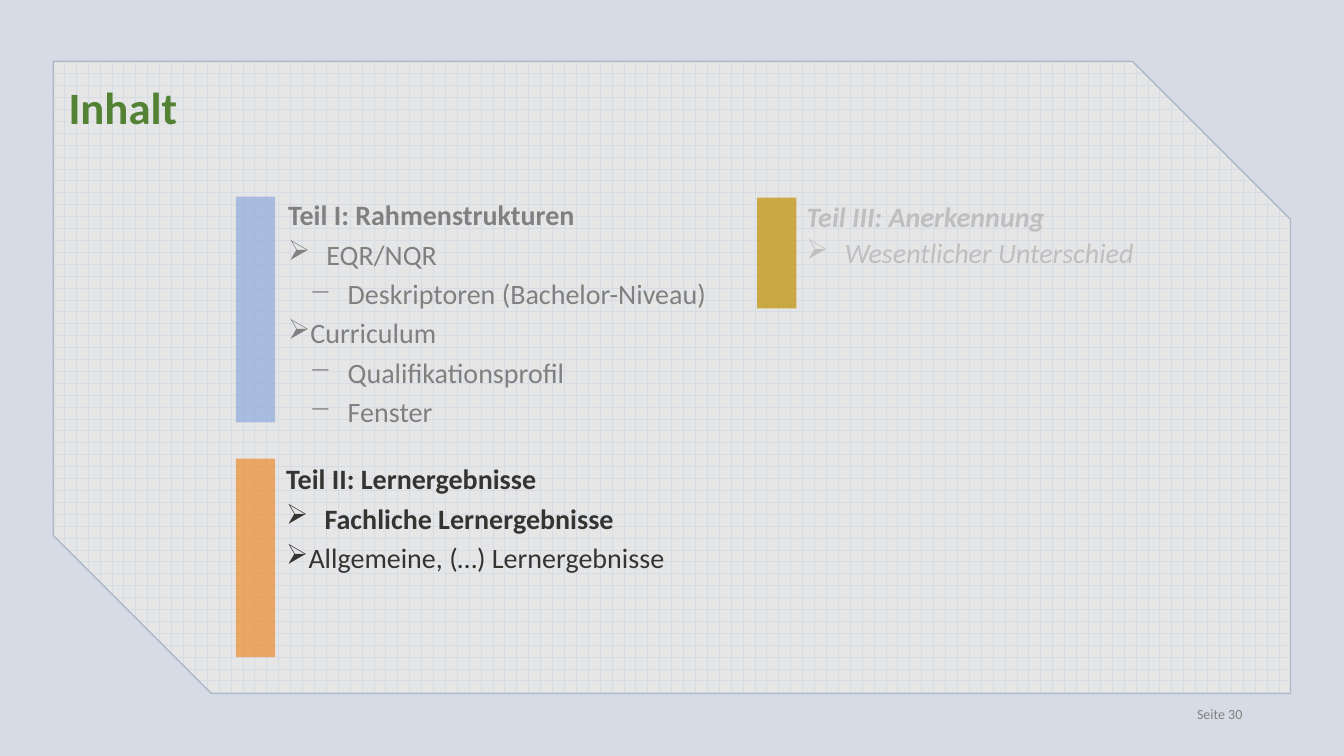
"""Build the contents slide with three course parts."""
from dataclasses import dataclass

from lxml import etree
from pptx import Presentation
from pptx.dml.color import RGBColor
from pptx.enum.dml import MSO_PATTERN
from pptx.enum.shapes import MSO_SHAPE
from pptx.enum.text import MSO_ANCHOR, MSO_AUTO_SIZE, PP_ALIGN
from pptx.oxml.ns import qn
from pptx.shapes.autoshape import Shape
from pptx.slide import Slide
from pptx.text.text import TextFrame, _Paragraph
from pptx.util import Inches, Pt

BRICK = MSO_PATTERN.HORIZONTAL_BRICK
SNIPPED = MSO_SHAPE.SNIP_2_DIAG_RECTANGLE
RECTANGLE = MSO_SHAPE.RECTANGLE
BOTTOM, TOP = MSO_ANCHOR.BOTTOM, MSO_ANCHOR.TOP
LEFT, RIGHT = PP_ALIGN.LEFT, PP_ALIGN.RIGHT
NO_AUTOFIT = MSO_AUTO_SIZE.NONE
TITLE_ONLY = 5
ARROW, DASH = "➢", "−"
HANGING = 0.38
BAR_WIDTH = 0.39
TIGHT = 0.9


@dataclass(frozen=True)
class Theme:
    """Colours and type sizes of the slide."""
    font: str = "Calibri"
    title_size: int = 32
    body_size: int = 20
    footer_size: int = 10
    background: str = "D6DCE5"
    panel: str = "E7E6E6"
    outline: str = "ADB9CA"
    title: str = "548235"
    muted: str = "808080"
    faint: str = "BFBFBF"
    active: str = "343433"
    blue: str = "8FAADC"
    orange: str = "EB8B2D"
    gold: str = "BF9000"
    bar_opacity: int = 70


@dataclass(frozen=True)
class Box:
    """Place and size in inches."""
    left: float
    top: float
    width: float
    height: float

    def lengths(self) -> tuple[Inches, Inches, Inches, Inches]:
        """Return the four values as lengths."""
        return Inches(self.left), Inches(self.top), Inches(self.width), Inches(self.height)


@dataclass(frozen=True)
class Item:
    """One bulleted line."""
    text: str
    bullet: str = ARROW
    margin: float = HANGING
    level: int = 0
    bold: bool = False


@dataclass(frozen=True)
class Part:
    """One course part with its coloured bar."""
    heading: str
    items: tuple[Item, ...]
    box: Box
    bar: Box
    bar_color: str
    text_color: str
    italic: bool = False
    item_spacing: float = 1.0


THEME = Theme()


def sub_item(text: str) -> Item:
    """Return a second-level dashed line."""
    return Item(text, DASH, 0.59, 1)


PARTS = (
    Part("Teil I: Rahmenstrukturen",
         (Item("EQR/NQR"), sub_item("Deskriptoren (Bachelor-Niveau)"),
          Item("Curriculum", margin=0.09), sub_item("Qualifikationsprofil"),
          sub_item("Fenster")),
         Box(2.76, 1.95, 5.82, 2.25), Box(2.34, 1.95, BAR_WIDTH, 2.24),
         THEME.blue, THEME.muted),
    Part("Teil II: Lernergebnisse",
         (Item("Fachliche Lernergebnisse", bold=True),
          Item("Allgemeine, (…) Lernergebnisse", margin=0.09)),
         Box(2.74, 4.57, 5.82, 1.29), Box(2.34, 4.55, BAR_WIDTH, 1.97),
         THEME.orange, THEME.active),
    Part("Teil III: Anerkennung", (Item("Wesentlicher Unterschied"),),
         Box(7.9, 1.97, 5.12, 1.09), Box(7.51, 1.96, BAR_WIDTH, 1.1),
         THEME.gold, THEME.faint, italic=True, item_spacing=TIGHT),
)


def color(value: str) -> RGBColor:
    """Turn a hex value into a colour."""
    return RGBColor.from_string(value)


def add_run(paragraph: _Paragraph, text: str, size: int, fill: str,
            bold: bool = False, italic: bool = False) -> None:
    """Add one formatted run."""
    run = paragraph.add_run()
    run.text = text
    font = run.font
    font.name, font.size = THEME.font, Pt(size)
    font.bold, font.italic = bold, italic
    font.color.rgb = color(fill)


def add_text_frame(slide: Slide, box: Box) -> TextFrame:
    """Add a wrapping text box and return its frame."""
    frame = slide.shapes.add_textbox(*box.lengths()).text_frame
    frame.word_wrap = True
    frame.vertical_anchor = TOP
    return frame


def set_bullet(paragraph: _Paragraph, item: Item) -> None:
    """Give a paragraph its hanging indent and bullet."""
    properties = paragraph._p.get_or_add_pPr()
    properties.set("marL", str(Inches(item.margin)))
    properties.set("indent", str(Inches(-HANGING)))
    etree.SubElement(properties, qn("a:buChar")).set("char", item.bullet)


def add_panel(slide: Slide) -> None:
    """Add the patterned panel with two snipped corners."""
    panel = slide.shapes.add_shape(SNIPPED, *Box(0.53, 0.61, 12.27, 6.27).lengths())
    panel.shadow.inherit = False
    panel.adjustments[0], panel.adjustments[1] = 0, 0.25
    panel.fill.patterned()
    panel.fill.pattern = BRICK
    panel.fill.fore_color.rgb = color(THEME.background)
    panel.fill.back_color.rgb = color(THEME.panel)
    panel.line.color.rgb = color(THEME.outline)
    panel.line.width = Pt(1)


def format_title(title: Shape) -> None:
    """Place and fill the title in front of the panel."""
    title.element.getparent().append(title.element)
    title.left, title.top, title.width, title.height = Box(0.58, 0.85, 12.29, 0.53).lengths()
    frame = title.text_frame
    frame.auto_size = NO_AUTOFIT
    frame.vertical_anchor = BOTTOM
    paragraph = frame.paragraphs[0]
    paragraph.alignment = LEFT
    paragraph.line_spacing = TIGHT
    add_run(paragraph, "Inhalt", THEME.title_size, THEME.title, bold=True)


def add_bar(slide: Slide, box: Box, fill: str) -> None:
    """Add a translucent bar."""
    bar = slide.shapes.add_shape(RECTANGLE, *box.lengths())
    bar.shadow.inherit = False
    bar.fill.solid()
    bar.fill.fore_color.rgb = color(fill)
    bar.line.fill.background()
    fill_color = next(bar.element.iter(qn("a:srgbClr")))
    etree.SubElement(fill_color, qn("a:alpha")).set("val", str(THEME.bar_opacity * 1000))


def add_part(slide: Slide, part: Part) -> None:
    """Add the bar, heading and bulleted lines of a part."""
    add_bar(slide, part.bar, part.bar_color)
    frame = add_text_frame(slide, part.box)
    heading = frame.paragraphs[0]
    heading.line_spacing, heading.space_before = TIGHT, Pt(10)
    add_run(heading, part.heading, THEME.body_size, part.text_color, True, part.italic)
    for item in part.items:
        paragraph = frame.add_paragraph()
        paragraph.level = item.level
        paragraph.line_spacing, paragraph.space_before = part.item_spacing, Pt(4)
        set_bullet(paragraph, item)
        add_run(paragraph, item.text, THEME.body_size, part.text_color, item.bold, part.italic)


def main() -> None:
    """Build and save the presentation."""
    presentation = Presentation()
    presentation.slide_width, presentation.slide_height = Inches(13.33), Inches(7.5)
    slide = presentation.slides.add_slide(presentation.slide_layouts[TITLE_ONLY])
    slide.background.fill.solid()
    slide.background.fill.fore_color.rgb = color(THEME.background)
    add_panel(slide)
    format_title(slide.shapes.title)
    for part in PARTS:
        add_part(slide, part)
    footer = add_text_frame(slide, Box(9.42, 6.95, 3, 0.4)).paragraphs[0]
    footer.alignment = RIGHT
    add_run(footer, "Seite 30", THEME.footer_size, THEME.muted)
    presentation.save("out.pptx")


if __name__ == "__main__":
    main()
